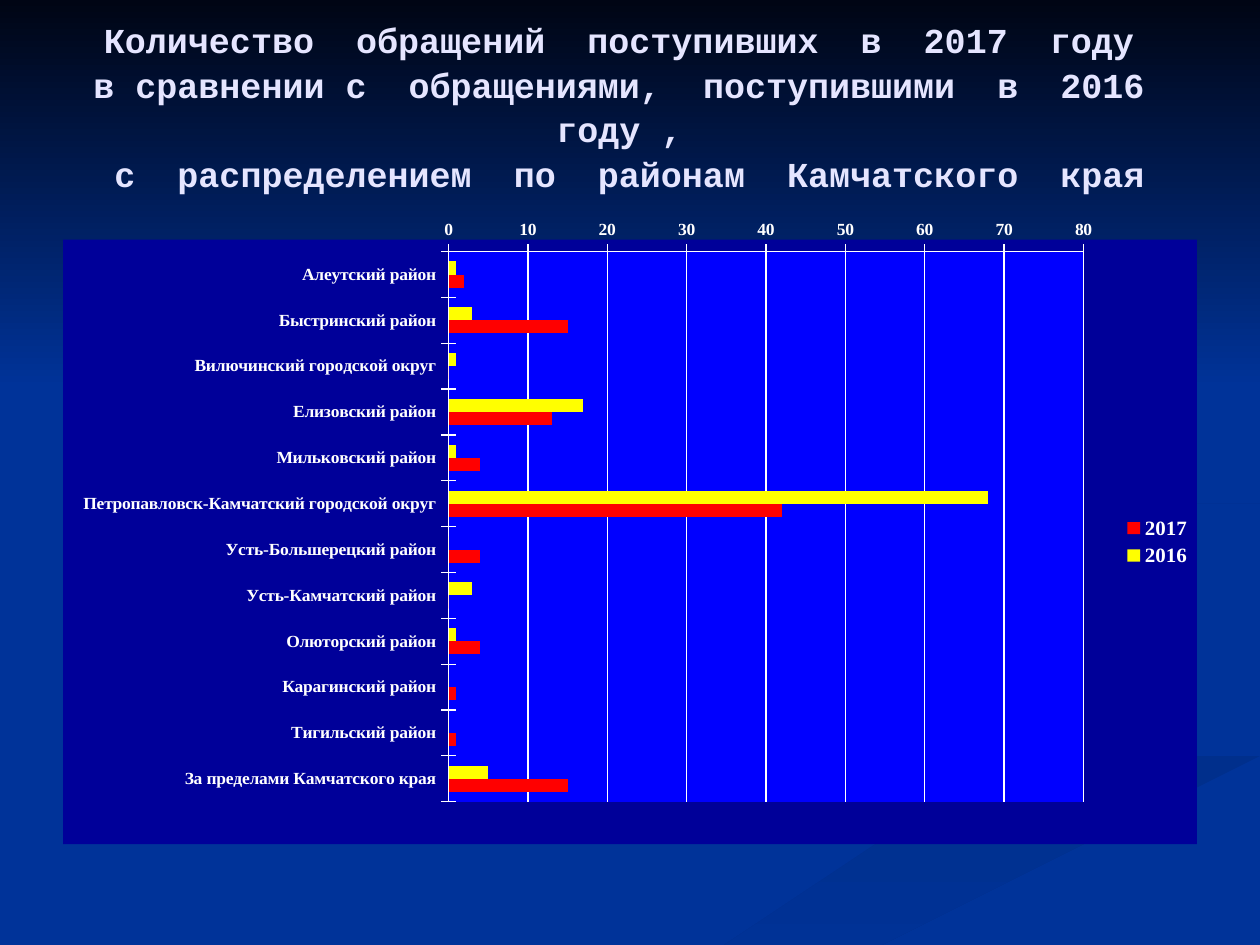
from pptx import Presentation
from pptx.chart.data import CategoryChartData
from pptx.dml.color import RGBColor
from pptx.enum.chart import XL_AXIS_CROSSES, XL_CHART_TYPE, XL_LEGEND_POSITION, XL_TICK_MARK
from pptx.enum.shapes import MSO_SHAPE
from pptx.enum.text import MSO_ANCHOR, PP_ALIGN
from pptx.oxml import parse_xml
from pptx.oxml.ns import nsdecls
from pptx.util import Inches, Pt

BAR_CLUSTERED = XL_CHART_TYPE.BAR_CLUSTERED
LEGEND_RIGHT = XL_LEGEND_POSITION.RIGHT
TICK_CROSS = XL_TICK_MARK.CROSS
CROSS_AT_MAXIMUM = XL_AXIS_CROSSES.MAXIMUM
RECTANGLE = MSO_SHAPE.RECTANGLE
MIDDLE, CENTER = MSO_ANCHOR.MIDDLE, PP_ALIGN.CENTER

THEME = {
    "background": "003399", "night": "000514", "ribbon": "002F8C", "title": "E5E5FF",
    "white": "FFFFFF", "chart": "000099", "plot": "0000FF",
    "2016": "FFFF00", "2017": "FF0000",
    "title_font": "Courier New", "chart_font": "Times New Roman",
    "title_size": Pt(20), "axis_size": Pt(10), "legend_size": Pt(12),
}


def paint(shape, start, end, angle):
    """Fill a borderless shape with a linear gradient, angle clockwise."""
    shape.shadow.inherit = False
    shape.line.fill.background()
    shape.fill.gradient()
    shape.fill.gradient_angle = (360 - angle) % 360
    for stop, color, position in zip(shape.fill.gradient_stops, (start, end), (0, 1)):
        stop.color.rgb = RGBColor.from_string(THEME[color])
        stop.position = position


def place(parent, index, x, y, width, height, target=""):
    """Give a plot area or legend a fixed place, as shares of the chart."""
    for old in parent.findall("{*}layout"):
        parent.remove(old)
    parent.insert(index, parse_xml(
        f'<c:layout {nsdecls("c")}><c:manualLayout>{target}'
        '<c:xMode val="edge"/><c:yMode val="edge"/>'
        f'<c:x val="{x}"/><c:y val="{y}"/><c:w val="{width}"/><c:h val="{height}"/>'
        "</c:manualLayout></c:layout>"))


presentation = Presentation()
presentation.slide_width, presentation.slide_height = Inches(10), Inches(7.5)
width, height = presentation.slide_width, presentation.slide_height
slide = presentation.slides.add_slide(presentation.slide_layouts[5])
shapes = slide.shapes
slide.background.fill.solid()
slide.background.fill.fore_color.rgb = RGBColor.from_string(THEME["background"])

# Faint background ribbons and their gradient angles
RIBBONS = [
    ([(5, 7.5), (5.7, 7.5), (7.5, 6.7), (10, 6.1), (10, 5.8), (7.6, 6.5)], 90),
    ([(7.8, 4.6), (8.3, 5), (8.1, 4.7), (8.8, 4.4), (10, 4.2), (10, 4), (8.2, 4.3)], 45),
]
for points, angle in RIBBONS:
    builder = shapes.build_freeform(*points[0], scale=Inches(1))
    builder.add_line_segments(points[1:], close=True)
    paint(builder.convert_to_shape(), "ribbon", "background", angle)

# Dark sky across the top
sky = shapes.add_shape(RECTANGLE, 0, 0, width, int(height * 0.41))
paint(sky, "night", "background", 90)

# Title, brought in front of the background
title = shapes.title
sky._element.addnext(title._element)
title.left, title.top = int(width * 0.05), Inches(0.21)
title.width, title.height = int(width * 0.9), Inches(1.25)
frame = title.text_frame
frame.text = ("Количество  обращений  поступивших  в  2017  году \v"
              "в сравнении с  обращениями,  поступившими  в  2016  году , \v"
              "с  распределением  по  районам  Камчатского  края")
frame.word_wrap = True
frame.vertical_anchor = MIDDLE
paragraph = frame.paragraphs[0]
paragraph.alignment = CENTER
paragraph.line_spacing = 1.06
for run in paragraph.runs:
    run.font.name, run.font.size, run.font.bold = THEME["title_font"], THEME["title_size"], True
    run.font.color.rgb = RGBColor.from_string(THEME["title"])

# Appeals by district: 2016, 2017
APPEALS = [
    ("Алеутский район", 1, 2), ("Быстринский район", 3, 15),
    ("Вилючинский городской округ", 1, 0), ("Елизовский район", 17, 13),
    ("Мильковский район", 1, 4), ("Петропавловск-Камчатский городской округ", 68, 42),
    ("Усть-Большерецкий район", 0, 4), ("Усть-Камчатский район", 3, 0),
    ("Олюторский район", 1, 4), ("Карагинский район", 0, 1),
    ("Тигильский район", 0, 1), ("За пределами Камчатского края", 5, 15),
]
districts, appeals_2016, appeals_2017 = zip(*APPEALS)
chart_data = CategoryChartData()
chart_data.categories = districts
chart_data.add_series("2016", appeals_2016)
chart_data.add_series("2017", appeals_2017)
chart = shapes.add_chart(BAR_CLUSTERED, int(width * 0.05), Inches(1.75),
                         int(width * 0.9), int(height * 0.66), chart_data).chart
chart.has_title = False
chart.font.name = THEME["chart_font"]
plot = chart.plots[0]
plot.gap_width, plot.overlap, plot.vary_by_categories = 150, 0, False
for series in plot.series:
    series.format.fill.solid()
    series.format.fill.fore_color.rgb = RGBColor.from_string(THEME[series.name])

# Axes
white = RGBColor.from_string(THEME["white"])
category_axis, value_axis = chart.category_axis, chart.value_axis
category_axis.reverse_order = True
category_axis.crosses = CROSS_AT_MAXIMUM
value_axis.minimum_scale, value_axis.maximum_scale, value_axis.major_unit = 0, 80, 10
value_axis.has_major_gridlines = True
value_axis.major_gridlines.format.line.color.rgb = white
for axis in (category_axis, value_axis):
    axis.major_tick_mark = TICK_CROSS
    axis.format.line.color.rgb = white

# Legend and lettering
chart.has_legend = True
legend = chart.legend
legend.position, legend.include_in_layout = LEGEND_RIGHT, False
for font, size in ((category_axis.tick_labels.font, THEME["axis_size"]),
                   (value_axis.tick_labels.font, THEME["axis_size"]),
                   (legend.font, THEME["legend_size"])):
    font.name, font.size, font.bold = THEME["chart_font"], size, True
    font.color.rgb = white

# Chart and plot backgrounds, fixed layout
chart_element = chart._chartSpace.chart
plot_area = chart_element.plotArea
place(plot_area, 0, 0.34, 0.02, 0.56, 0.91, '<c:layoutTarget val="inner"/>')
place(legend._element, 1, 0.93, 0.45, 0.07, 0.1)
FILL = ('<c:spPr {}><a:solidFill><a:srgbClr val="{}"/></a:solidFill>'
        "<a:ln><a:noFill/></a:ln></c:spPr>")
plot_area.append(parse_xml(FILL.format(nsdecls("c", "a"), THEME["plot"])))
chart_element.addnext(parse_xml(FILL.format(nsdecls("c", "a"), THEME["chart"])))

presentation.save("out.pptx")
